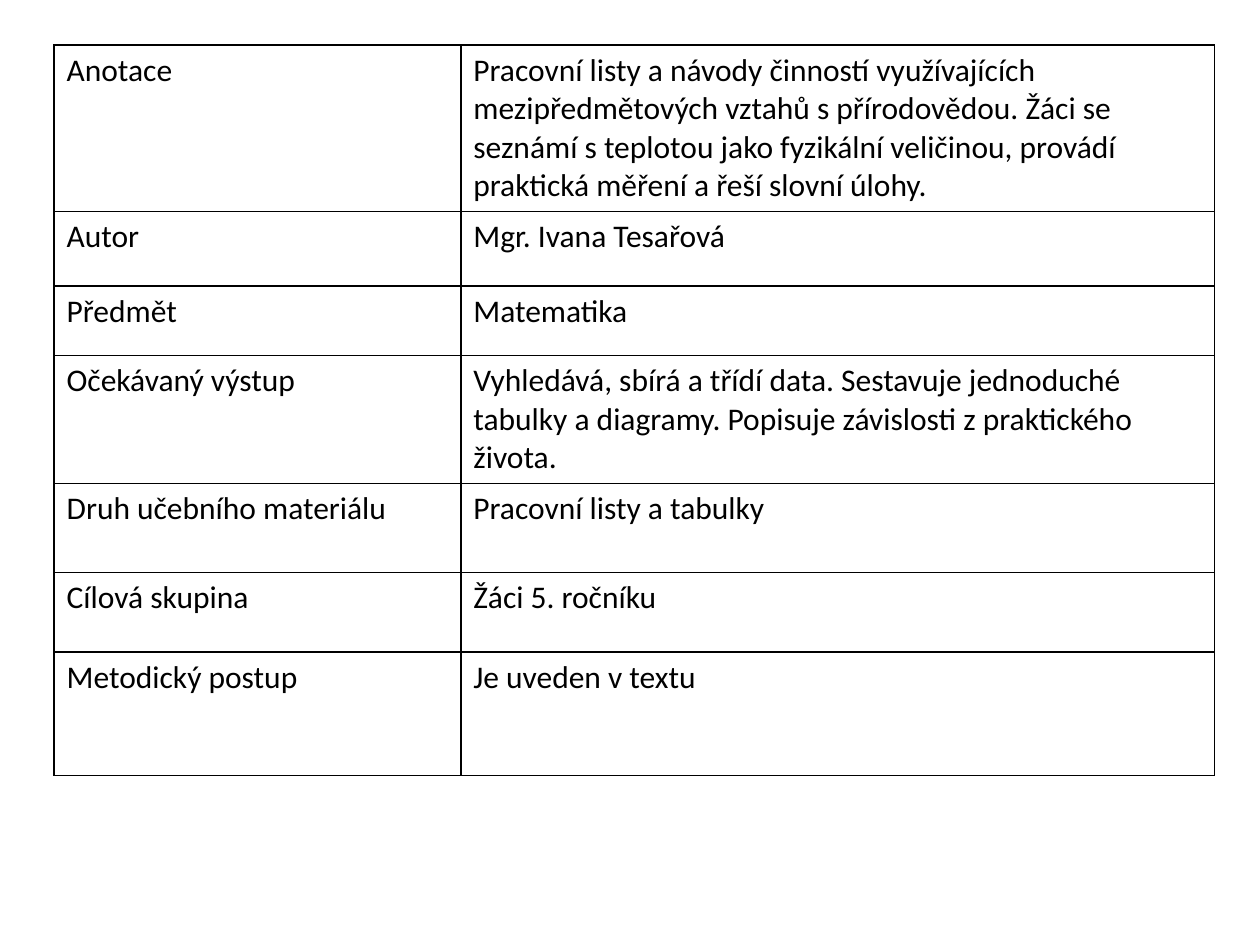
from dataclasses import dataclass

from lxml.etree import SubElement
from pptx import Presentation
from pptx.dml.color import RGBColor
from pptx.oxml.ns import qn
from pptx.table import _Cell as Cell
from pptx.util import Cm, Pt


@dataclass(frozen=True)
class Theme:
    font: str = "Calibri"
    text_size: Pt = Pt(18)
    ink: str = "000000"
    border_width: Pt = Pt(1)


@dataclass(frozen=True)
class Entry:
    label: str
    description: str
    height: Cm


THEME = Theme()
COLUMN_WIDTHS = (Cm(8.2), Cm(15.19))
TABLE_HEIGHT = Cm(14.63)
ENTRIES = (
    Entry(
        "Anotace",
        "Pracovní listy a návody činností využívajících mezipředmětových vztahů "
        "s přírodovědou. Žáci se seznámí s teplotou jako fyzikální veličinou, "
        "provádí praktická měření a řeší slovní úlohy.",
        Cm(2.49),
    ),
    Entry("Autor", "Mgr. Ivana Tesařová", Cm(1.5)),
    Entry("Předmět", "Matematika", Cm(1.4)),
    Entry(
        "Očekávaný výstup",
        "Vyhledává, sbírá a třídí data. Sestavuje jednoduché tabulky a diagramy. "
        "Popisuje závislosti z praktického života.",
        Cm(1.4),
    ),
    Entry("Druh učebního materiálu", "Pracovní listy a tabulky", Cm(1.8)),
    Entry("Cílová skupina", "Žáci 5. ročníku", Cm(1.6)),
    Entry("Metodický postup", "Je uveden v textu", Cm(2.49)),
)


def draw_borders(cell: Cell) -> None:
    properties = cell._tc.get_or_add_tcPr()
    for side in ("a:lnL", "a:lnR", "a:lnT", "a:lnB"):
        line = SubElement(properties, qn(side), w=str(THEME.border_width))
        fill = SubElement(line, qn("a:solidFill"))
        SubElement(fill, qn("a:srgbClr"), val=THEME.ink)


def write_cell(cell: Cell, text: str) -> None:
    draw_borders(cell)
    cell.fill.background()
    run = cell.text_frame.paragraphs[0].add_run()
    run.text = text
    run.font.name = THEME.font
    run.font.size = THEME.text_size
    run.font.color.rgb = RGBColor.from_string(THEME.ink)


def main() -> None:
    presentation = Presentation()
    presentation.slide_width, presentation.slide_height = Cm(25.4), Cm(19.05)
    slide = presentation.slides.add_slide(presentation.slide_layouts[6])

    frame = slide.shapes.add_table(
        len(ENTRIES), len(COLUMN_WIDTHS),
        Cm(1.09), Cm(0.91), sum(COLUMN_WIDTHS), TABLE_HEIGHT,
    )
    table = frame.table
    table.first_row = table.horz_banding = False
    for column, width in zip(table.columns, COLUMN_WIDTHS):
        column.width = width
    for row, entry in zip(table.rows, ENTRIES):
        row.height = entry.height
        for cell, text in zip(row.cells, (entry.label, entry.description)):
            write_cell(cell, text)
    # Wrapped text makes rows grow beyond their minimum heights.
    frame.height = TABLE_HEIGHT

    presentation.save("out.pptx")


if __name__ == "__main__":
    main()
